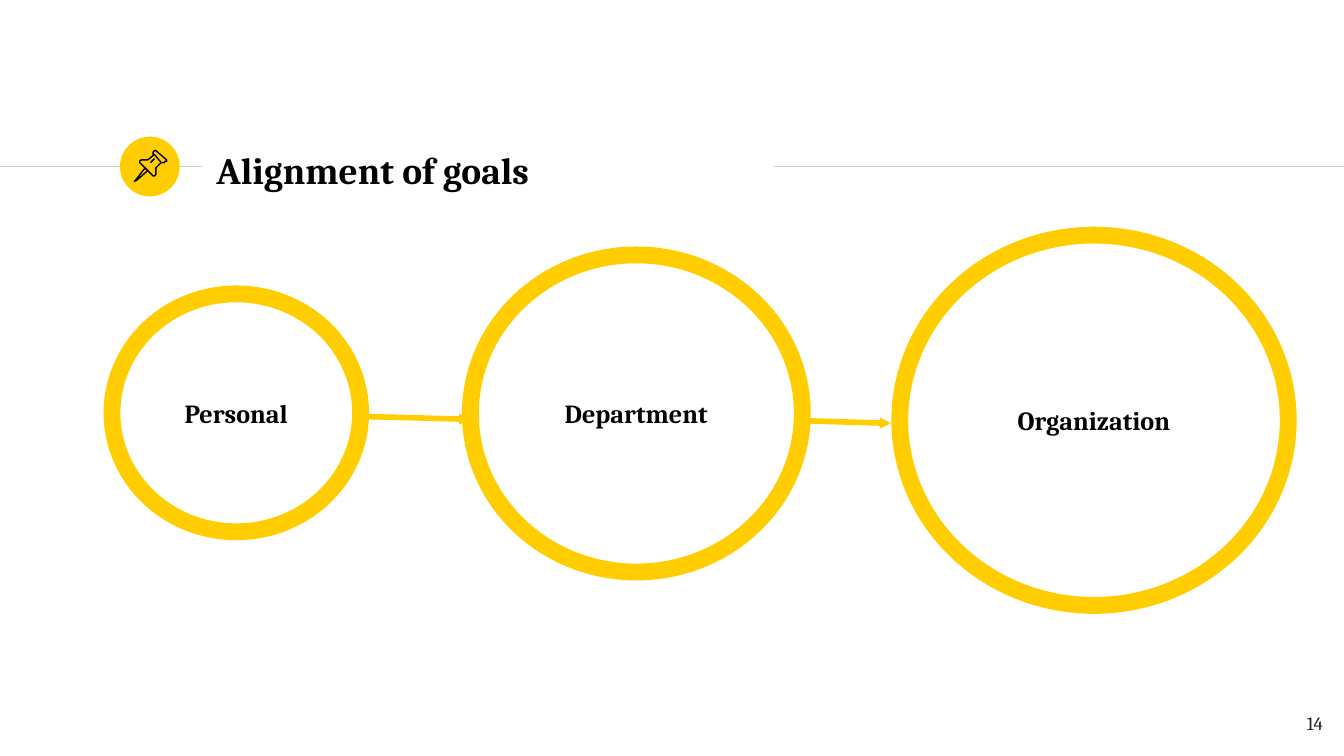
from lxml import etree
from pptx import Presentation
from pptx import util as u
from pptx.dml.color import RGBColor
from pptx.enum import shapes, text
from pptx.oxml.ns import qn

# The grid: square cells, 100 columns by 56.25 rows (16:9)
COLS, ROWS = 100, 56.25
CELL = u.Inches(0.1)
GOLD, GREY, BLACK, INK = "FFCD00", "CCCCCC", "000000", "1D1D1B"

# Pushpin outlines, in tenths of a cell: (points, closed)
PIN = [
    ([(108, 125), (101, 134), (100, 135), (102, 134), (110, 127)], True),
    ([(115, 115), (120, 121), (122, 121), (123, 120), (124, 120),
      (124, 119), (116, 112), (115, 112), (114, 113), (114, 115)], True),
    ([(115, 115), (110, 119), (108, 119), (105, 119), (104, 120),
      (104, 121), (114, 131), (115, 131), (116, 130), (116, 125),
      (120, 121)], False),
    ([(112, 121), (115, 118)], False),
]

# Goal levels: name, column, row, columns wide, rows high
GOALS = [
    ("Personal", 8.33, 21.87, 18.5, 17.7),
    ("Organization", 66.95, 17.5, 28.9, 27.55),
    ("Department", 35, 18.97, 24.7, 23.6),
]


def grid(*cells):
    return [round(n * CELL) for n in cells]


def color(code):
    return RGBColor.from_string(code)


def stroke(line, code, width):
    line.color.rgb = color(code)
    line.width = u.Pt(width)


def write(shape, words, size, code, align, bold=True,
          anchor=text.MSO_ANCHOR.MIDDLE):
    frame = shape.text_frame
    form = {f"margin_{side}": CELL
            for side in ("left", "top", "right", "bottom")}
    form.update(word_wrap=True, vertical_anchor=anchor,
                auto_size=text.MSO_AUTO_SIZE.NONE)
    for key, value in form.items():
        setattr(frame, key, value)
    para = frame.paragraphs[0]
    para.alignment = align
    run = para.add_run()
    run.text = words
    for key, value in {"name": "Cambria", "size": u.Pt(size),
                       "bold": bold}.items():
        setattr(run.font, key, value)
    run.font.color.rgb = color(code)


def rule(slide, start, end, code, width, arrow=False):
    line = slide.shapes.add_connector(
        shapes.MSO_CONNECTOR.STRAIGHT, *grid(*start, *end))
    stroke(line.line, code, width)
    props = line._element.spPr
    if arrow:
        etree.SubElement(props.find(qn("a:ln")), qn("a:tailEnd"),
                         type="triangle", w="sm", len="sm")
    etree.SubElement(props, qn("a:effectLst"))


def disc(slide, place):
    shape = slide.shapes.add_shape(shapes.MSO_SHAPE.OVAL, *grid(*place))
    shape.shadow.inherit = False
    return shape


def ring(slide, name, *place):
    shape = disc(slide, place)
    shape.fill.background()
    stroke(shape.line, GOLD, 9)
    write(shape, name, 14, BLACK, text.PP_ALIGN.CENTER)


def badge(slide):
    shape = disc(slide, (8.93, 10.17, 4.45, 4.45))
    shape.fill.solid()
    shape.fill.fore_color.rgb = color(GOLD)
    shape.line.fill.background()


def pin(slide):
    group = slide.shapes.add_group_shape()
    for points, closed in PIN:
        pen = group.shapes.build_freeform(*points[0], scale=CELL / 10)
        pen.add_line_segments(points[1:], close=closed)
        part = pen.convert_to_shape()
        part.shadow.inherit = False
        part.fill.background()
        stroke(part.line, BLACK, 0.75)


def title(slide, words):
    shape = slide.shapes.title
    shape.left, shape.top, shape.width, shape.height = grid(
        15.1, 10.2, 42.4, 4.8)
    write(shape, words, 20, BLACK, text.PP_ALIGN.LEFT)


def number(slide, words):
    box = slide.shapes.add_textbox(*grid(93.4, 51.95, 6, 4.3))
    write(box, words, 10, INK, text.PP_ALIGN.RIGHT, False,
          text.MSO_ANCHOR.TOP)


def main():
    deck = Presentation()
    deck.slide_width, deck.slide_height = grid(COLS, ROWS)
    slide = deck.slides.add_slide(deck.slide_layouts[5])

    # Heading band
    rule(slide, (0, 12.4), (15, 12.4), GREY, 0.75)
    badge(slide)
    rule(slide, (57.6, 12.4), (COLS, 12.4), GREY, 0.75)
    title(slide, "Alignment of goals")
    pin(slide)

    # Goal rings and the arrows between them
    for goal in GOALS:
        ring(slide, *goal)
    rule(slide, (27.45, 31), (35, 31.2), GOLD, 3, arrow=True)
    rule(slide, (59.7, 31.3), (66.3, 31.5), GOLD, 3, arrow=True)

    number(slide, "14")
    deck.save("out.pptx")


if __name__ == "__main__":
    main()
